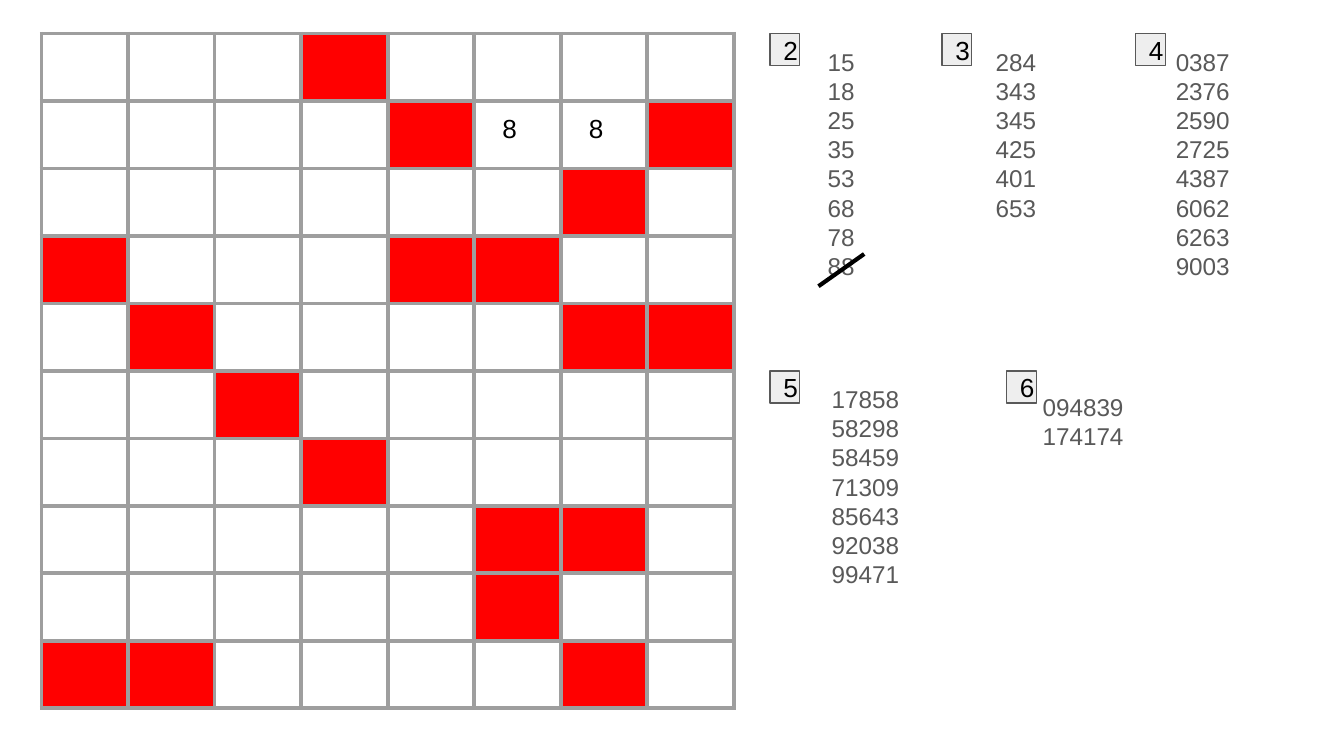
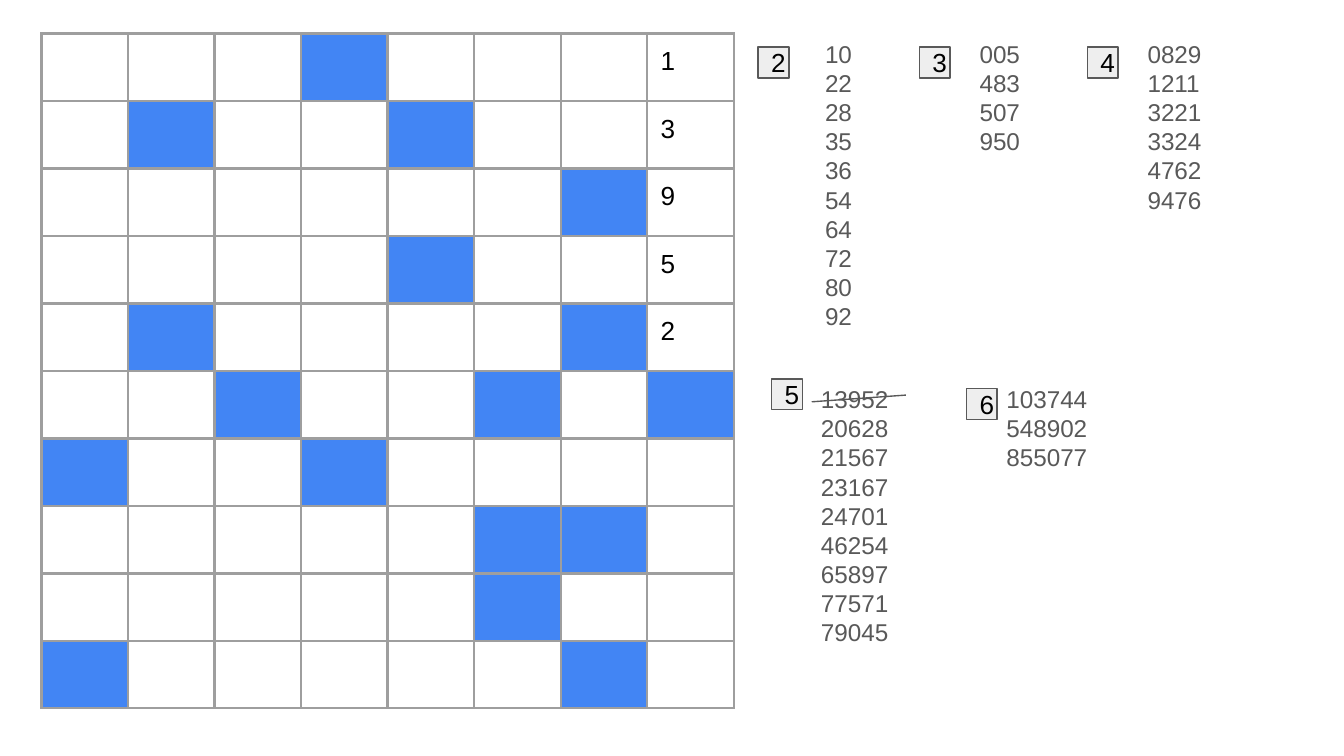
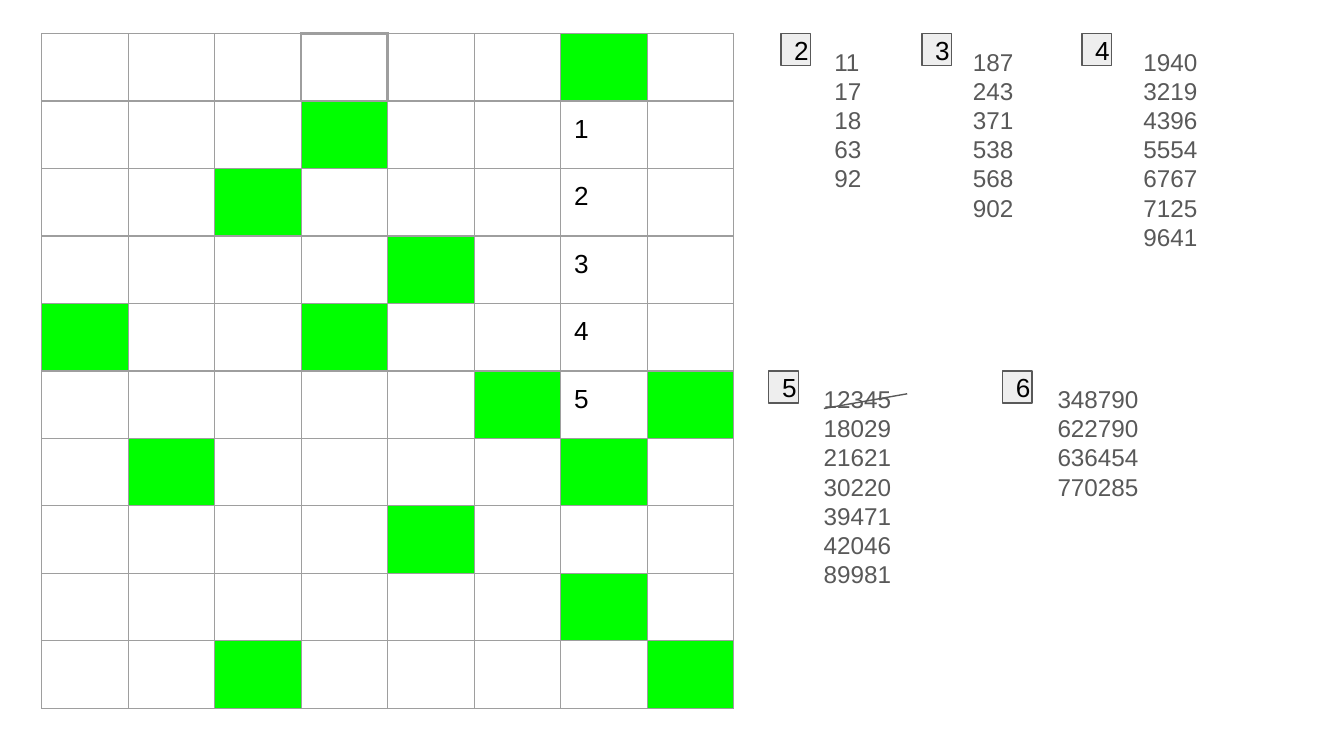
from dataclasses import dataclass

from lxml.etree import SubElement
from pptx import Presentation
from pptx.dml.color import RGBColor
from pptx.enum.shapes import MSO_CONNECTOR, MSO_SHAPE
from pptx.enum.text import MSO_ANCHOR, PP_ALIGN
from pptx.oxml import parse_xml
from pptx.oxml.ns import nsdecls, qn
from pptx.util import Emu, Pt

PX = 9144  # 100 px to the inch
PAD = 10
FONT = "Arial"

BLACK = RGBColor(0x00, 0x00, 0x00)
DARK_GRAY = RGBColor(0x59, 0x59, 0x59)
GRID_GRAY = RGBColor(0x9E, 0x9E, 0x9E)
LIGHT_GRAY = RGBColor(0xEE, 0xEE, 0xEE)
RED = RGBColor(0xFF, 0x00, 0x00)
BLUE = RGBColor(0x42, 0x85, 0xF4)
GREEN = RGBColor(0x00, 0xFF, 0x00)

GRID_BOX = (31, 25, 515, 502)
SIDES = {"lnL": (0, -1), "lnR": (0, 1), "lnT": (-1, 0), "lnB": (1, 0)}


@dataclass
class Group:
    """Numbers of one length: list box, badge offset from it, and the numbers."""
    box: tuple
    badge_offset: tuple
    numbers: str


@dataclass
class Puzzle:
    color: RGBColor
    rows: str  # "#" is a filled cell, "." an empty one
    border: float
    badge_size: tuple
    groups: list
    strike: tuple  # x1, y1, x2, y2
    strike_color: RGBColor = DARK_GRAY
    strike_width: float = 0.75
    digit_indent: int = 0
    heavy_cell: tuple = None


PUZZLES = [
    Puzzle(
        color=RED, border=2.25, badge_size=(22, 24), digit_indent=11,
        rows="...#.... ....#88# ......#. #...##.. .#....## "
             "..#..... ...#.... .....##. .....#.. ##....#.",
        groups=[
            Group((606, 25, 91, 257), (-33, 0), "15 18 25 35 53 68 78 88"),
            Group((731, 25, 79, 188), (-30, 0), "284 343 345 425 401 653"),
            Group((865, 25, 91, 201), (-20, 0),
                  "0387 2376 2590 2725 4387 6062 6263 9003"),
            Group((609, 276, 106, 228), (-36, 0),
                  "17858 58298 58459 71309 85643 92038 99471"),
            Group((766, 282, 86, 83), (-17, -6), "094839 174174"),
        ],
        strike=(609, 213, 643, 189), strike_color=BLACK, strike_width=2.25),
    Puzzle(
        color=BLUE, border=1.5, badge_size=(23, 23),
        rows="...#...1 .#..#..3 ......#9 ....#..5 .#....#2 "
             "..#..#.# #..#.... .....##. .....#.. #.....#.",
        groups=[
            Group((604, 19, 91, 257), (-40, 16),
                  "10 22 28 35 36 54 64 72 80 92"),
            Group((719, 19, 79, 188), (-35, 16), "005 483 507 950"),
            Group((844, 19, 91, 209), (-35, 16),
                  "0829 1211 3221 3324 4762 9476"),
            Group((601, 276, 89, 228), (-27, 6),
                  "13952 20628 21567 23167 24701 46254 65897 77571 79045"),
            Group((739, 276, 113, 132), (-20, 13), "103744 548902 855077"),
        ],
        strike=(604, 299, 674, 294)),
    Puzzle(
        color=GREEN, border=0.75, badge_size=(22, 24), heavy_cell=(0, 3),
        rows="......#. ...#..1. ..#...2. ....#.3. #..#..4. "
             ".....#5# .#....#. ....#... ......#. ..#....#",
        groups=[
            Group((611, 25, 66, 205), (-30, 0), "11 17 18 63 92"),
            Group((714, 25, 78, 184), (-28, 0), "187 243 371 538 568 902"),
            Group((841, 25, 96, 216), (-36, 0),
                  "1940 3219 4396 5554 6767 7125 9641"),
            Group((603, 276, 108, 231), (-31, 0),
                  "12345 18029 21621 30220 39471 42046 89981"),
            Group((777, 276, 119, 174), (-31, 0),
                  "348790 622790 636454 770285"),
        ],
        strike=(613, 304, 675, 293)),
]


def px(*lengths):
    return [Emu(round(n * PX)) for n in lengths]


def style_runs(p, size, color):
    for r in p.runs:
        r.font.name = FONT
        r.font.size = Pt(size)
        r.font.color.rgb = color


def set_margins(target, indent=0):
    """Give a cell or text frame the shared padding."""
    target.margin_left, target.margin_right = px(PAD + indent, PAD)
    target.margin_top, target.margin_bottom = px(PAD, PAD)


def set_borders(cell, row, col, puzzle):
    tc_pr = cell._tc.get_or_add_tcPr()
    for i, (tag, (d_row, d_col)) in enumerate(SIDES.items()):
        touching = ((row, col), (row + d_row, col + d_col))
        width = 1.5 if puzzle.heavy_cell in touching else puzzle.border
        tc_pr.insert(i, parse_xml(
            f'<a:{tag} {nsdecls("a")} w="{Pt(width)}"><a:solidFill>'
            f'<a:srgbClr val="{GRID_GRAY}"/></a:solidFill></a:{tag}>'))


def add_grid(slide, box, puzzle):
    rows = puzzle.rows.split()
    tbl = slide.shapes.add_table(len(rows), len(rows[0]), *px(*box)).table
    tbl.first_row = tbl.horz_banding = False
    for column in tbl.columns:
        column.width = px(box[2] / len(rows[0]))[0]
    for row in tbl.rows:
        row.height = px(box[3] / len(rows))[0]

    for i, marks in enumerate(rows):
        for j, mark in enumerate(marks):
            cell = tbl.cell(i, j)
            if mark == "#":
                cell.fill.solid()
                cell.fill.fore_color.rgb = puzzle.color
            else:
                cell.fill.background()
            if mark.isdigit():
                cell.text_frame.text = mark
                style_runs(cell.text_frame.paragraphs[0], 14, BLACK)
                set_margins(cell, puzzle.digit_indent)
            set_borders(cell, i, j, puzzle)


def add_badge(slide, box, label):
    sp = slide.shapes.add_shape(MSO_SHAPE.RECTANGLE, *px(*box))
    sp.shadow.inherit = False
    sp.fill.solid()
    sp.fill.fore_color.rgb = LIGHT_GRAY
    sp.line.color.rgb = DARK_GRAY
    sp.line.width = Pt(0.75)
    tf = sp.text_frame
    set_margins(tf)
    tf.vertical_anchor = MSO_ANCHOR.MIDDLE
    tf.text = label
    p = tf.paragraphs[0]
    p.alignment = PP_ALIGN.CENTER
    style_runs(p, 14, BLACK)


def add_group(slide, group, badge_size):
    numbers = group.numbers.split()
    # Number list
    tf = slide.shapes.add_textbox(*px(*group.box)).text_frame
    tf.word_wrap = True
    set_margins(tf)
    tf.text = "\n".join(numbers)
    for p in tf.paragraphs:
        style_runs(p, 13, DARK_GRAY)
    # Badge with the count of digits
    x, y = group.box[:2]
    dx, dy = group.badge_offset
    add_badge(slide, (x + dx, y + dy, *badge_size), str(len(numbers[0])))


def add_strike(slide, puzzle):
    line = slide.shapes.add_connector(MSO_CONNECTOR.STRAIGHT, *px(*puzzle.strike))
    line.line.color.rgb = puzzle.strike_color
    line.line.width = Pt(puzzle.strike_width)
    SubElement(line._element.spPr, qn("a:effectLst"))


def add_puzzle_slide(prs, puzzle):
    slide = prs.slides.add_slide(prs.slide_layouts[6])
    add_grid(slide, GRID_BOX, puzzle)
    for group in puzzle.groups:
        add_group(slide, group, puzzle.badge_size)
    add_strike(slide, puzzle)


def main():
    prs = Presentation()
    prs.slide_width, prs.slide_height = px(1000, 562.5)
    for puzzle in PUZZLES:
        add_puzzle_slide(prs, puzzle)
    prs.save("out.pptx")


if __name__ == "__main__":
    main()
